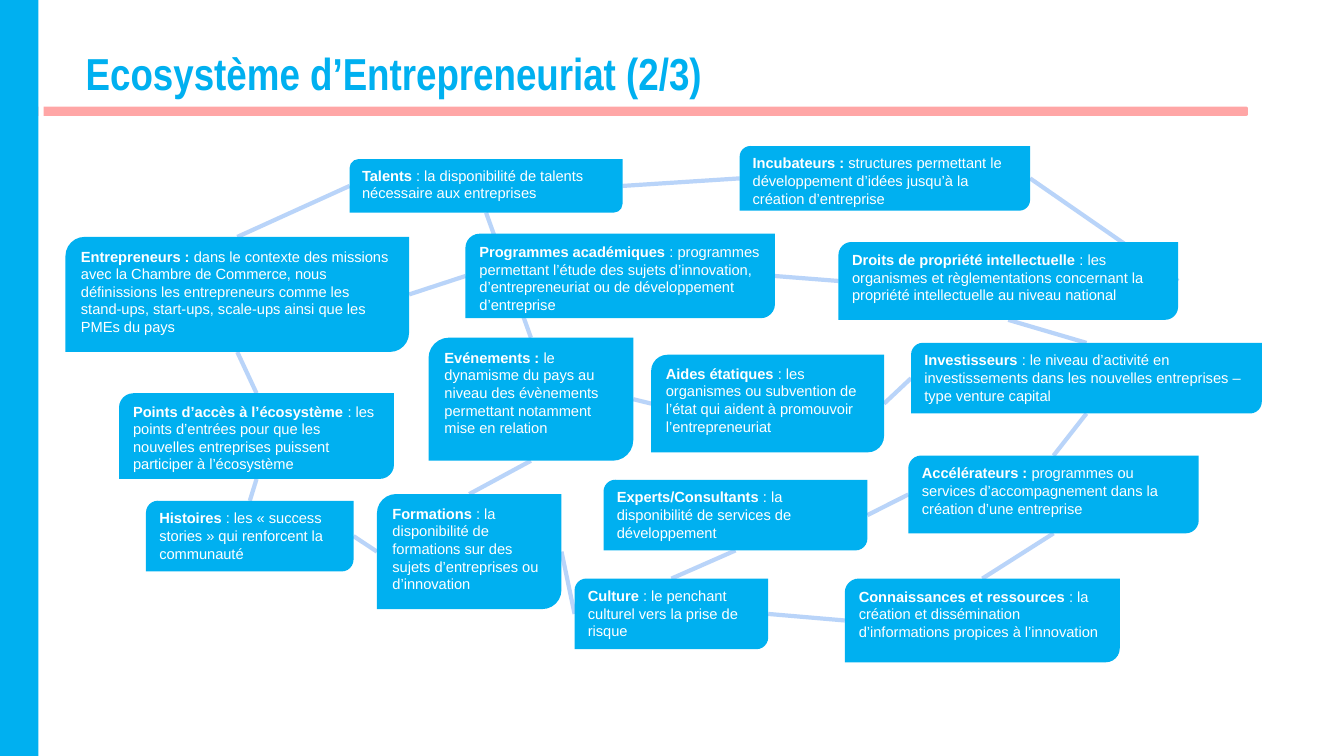
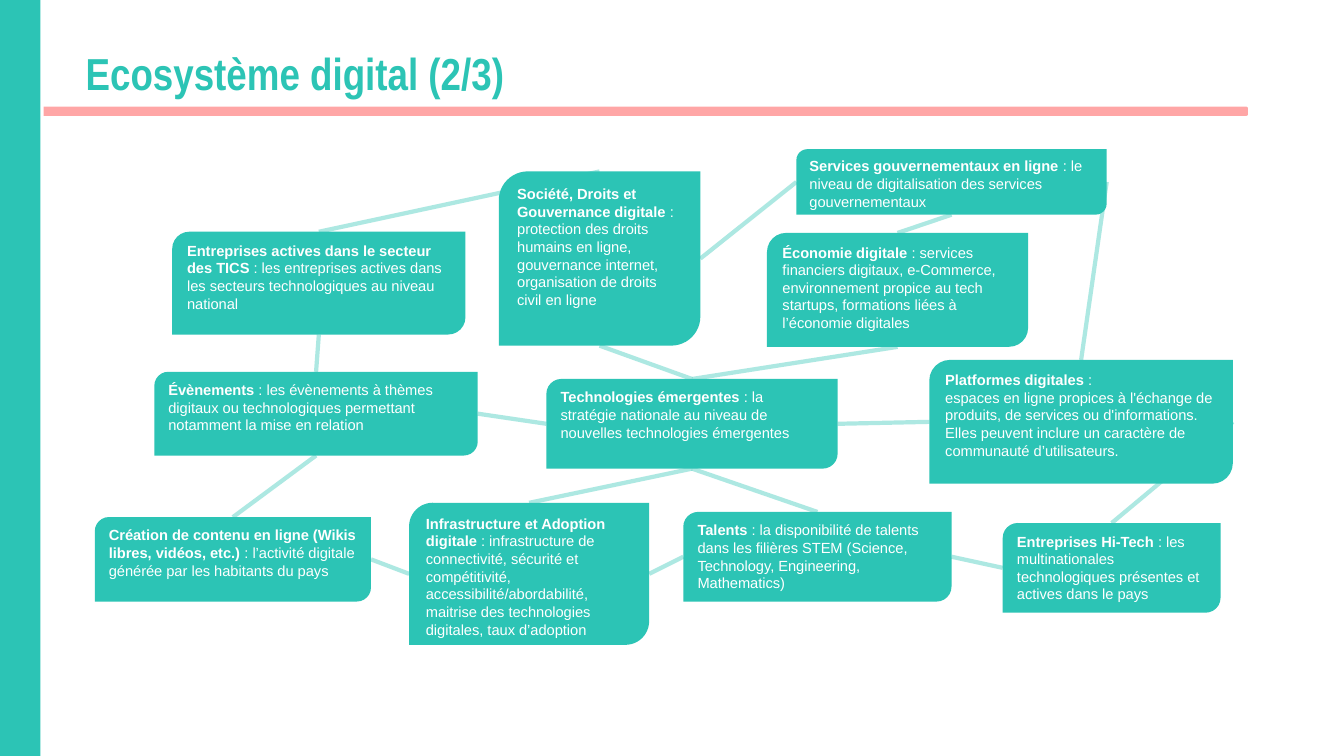
from dataclasses import dataclass
from enum import IntEnum
from typing import NamedTuple

from lxml import etree
from pptx import Presentation
from pptx.dml.color import RGBColor
from pptx.enum import shapes, text
from pptx.oxml.ns import qn
from pptx.util import Cm, Pt


class Side(IntEnum):
    TOP = 0
    LEFT = 1
    BOTTOM = 2
    RIGHT = 3


TOP, LEFT, BOTTOM, RIGHT = Side


@dataclass(frozen=True)
class Theme:
    white: str = "FFFFFF"
    rule: str = "FF0000"
    blue: str = "00B0F0"
    blue_link: str = "4D91F0"
    teal: str = "2CC4B5"
    title_font: str = "Arial Narrow"
    body_font: str = "Arial"
    title_size: float = 32
    body_size: float = 10.5
    link_width: float = 3
    rule_opacity: int = 35
    link_opacity: int = 38


THEME = Theme()
PAGE_WIDTH, PAGE_HEIGHT = 33.87, 19.05


class Frame(NamedTuple):
    """Left, top, width and height in centimetres."""
    left: float
    top: float
    width: float
    height: float

    def lengths(self) -> list[Cm]:
        return [Cm(value) for value in self]


class Card(NamedTuple):
    frame: Frame
    term: str
    detail: str


class Link(NamedTuple):
    start: str
    start_side: Side
    end: str
    end_side: Side


@dataclass(frozen=True)
class Ecosystem:
    title: str
    accent: str
    link_color: str
    band_width: float
    cards: dict[str, Card]
    links: list[Link]


def set_opacity(shape, percent: int) -> None:
    for color in shape.element.spPr.iter(qn("a:srgbClr")):
        etree.SubElement(color, qn("a:alpha"), val=str(percent * 1000))


def add_span(para, words: str, *, size: float, font: str, color: str, bold: bool = False) -> None:
    """Append formatted text; each newline becomes a line break."""
    for index, line in enumerate(words.split("\n")):
        if index:
            para.add_line_break()
        span = para.add_run()
        span.text = line
        span.font.size = Pt(size)
        span.font.name = font
        span.font.bold = bold
        span.font.color.rgb = RGBColor.from_string(color)


def add_block(page, kind, frame: Frame, color: str):
    block = page.shapes.add_shape(kind, *frame.lengths())
    block.shadow.inherit = False
    block.fill.solid()
    block.fill.fore_color.rgb = RGBColor.from_string(color)
    block.line.fill.background()
    return block


def add_page_frame(page, ecosystem: Ecosystem) -> None:
    """Draw the rule, the side band and the title."""
    kinds = shapes.MSO_SHAPE
    rule = add_block(page, kinds.ROUNDED_RECTANGLE, Frame(0, 2.69, 31.45, 0.23), THEME.rule)
    set_opacity(rule, THEME.rule_opacity)
    add_block(page, kinds.RECTANGLE, Frame(0.97, 0, 0.13, PAGE_HEIGHT), THEME.white)
    add_block(page, kinds.RECTANGLE, Frame(0, 0, ecosystem.band_width, PAGE_HEIGHT), ecosystem.accent)

    box = page.shapes.add_textbox(*Frame(1.91, 1.32, 30.66, 1.19).lengths())
    box.text_frame.word_wrap = True
    box.text_frame.vertical_anchor = text.MSO_ANCHOR.MIDDLE
    para = box.text_frame.paragraphs[0]
    para.line_spacing = 0.9
    add_span(para, ecosystem.title, size=THEME.title_size, font=THEME.title_font,
             color=ecosystem.accent, bold=True)


def add_card(page, card: Card, color: str):
    box = add_block(page, shapes.MSO_SHAPE.ROUND_2_DIAG_RECTANGLE, card.frame, color)
    box.text_frame.word_wrap = True
    box.text_frame.vertical_anchor = text.MSO_ANCHOR.TOP
    para = box.text_frame.paragraphs[0]
    para.alignment = text.PP_ALIGN.LEFT
    style = dict(size=THEME.body_size, font=THEME.body_font, color=THEME.white)
    add_span(para, card.term, bold=True, **style)
    add_span(para, f" {card.detail}", **style)
    return box


def add_link(page, link: Link, boxes: dict, color: str):
    line = page.shapes.add_connector(shapes.MSO_CONNECTOR.STRAIGHT, 0, 0, 0, 0)
    line.begin_connect(boxes[link.start], int(link.start_side))
    line.end_connect(boxes[link.end], int(link.end_side))
    line.line.color.rgb = RGBColor.from_string(color)
    line.line.width = Pt(THEME.link_width)
    set_opacity(line, THEME.link_opacity)
    etree.SubElement(line.element.spPr, qn("a:effectLst"))
    return line


def add_ecosystem(deck, ecosystem: Ecosystem) -> None:
    page = deck.slides.add_slide(deck.slide_layouts[6])
    add_page_frame(page, ecosystem)
    boxes = {name: add_card(page, card, ecosystem.accent) for name, card in ecosystem.cards.items()}
    rearmost = next(iter(boxes.values()))
    for link in ecosystem.links:
        line = add_link(page, link, boxes, ecosystem.link_color)
        rearmost.element.addprevious(line.element)  # links run behind the cards


ENTREPRENEURSHIP = Ecosystem(
    title="Ecosystème d’Entrepreneuriat (2/3)",
    accent=THEME.blue,
    link_color=THEME.blue_link,
    band_width=0.97,
    cards={
        "incubators": Card(Frame(18.64, 3.68, 7.32, 1.63), "Incubateurs :",
                           "structures permettant le développement d’idées jusqu’à la création d’entreprise"),
        "accelerators": Card(Frame(22.89, 11.48, 7.32, 1.96), "Accélérateurs :",
                             "programmes ou services d’accompagnement dans la création d’une entreprise"),
        "aid": Card(Frame(16.41, 8.94, 5.87, 2.46), "Aides étatiques",
                    ": les organismes ou subvention de l’état qui aident à promouvoir l’entrepreneuriat"),
        "entrepreneurs": Card(Frame(1.65, 5.97, 8.66, 2.9), "Entrepreneurs :",
                              "dans le contexte des missions avec la Chambre de Commerce, nous définissions les "
                              "entrepreneurs comme les stand-ups, start-ups, scale-ups ainsi que les PMEs du pays"),
        "programmes": Card(Frame(11.73, 5.89, 7.8, 2.13), "Programmes académiques",
                           ": programmes permettant l’étude des sujets d’innovation, d’entrepreneuriat "
                           "ou de développement d’entreprise"),
        "rights": Card(Frame(21.13, 6.1, 8.56, 1.96), "Droits de propriété intellectuelle",
                       ": les organismes et règlementations concernant la propriété intellectuelle "
                       "au niveau national"),
        "investors": Card(Frame(22.96, 8.64, 8.84, 1.78), "Investisseurs",
                          ": le niveau d’activité en investissements dans les nouvelles entreprises – "
                          "type venture capital"),
        "talents": Card(Frame(8.81, 4.01, 6.88, 1.35), "Talents",
                        ": la disponibilité de talents nécessaire aux entreprises"),
        "knowledge": Card(Frame(21.29, 14.58, 6.93, 2.11), "Connaissances et ressources",
                          ": la création et dissémination d’informations propices à l’innovation"),
        "access": Card(Frame(3, 9.91, 6.93, 2.16), "Points d’accès à l’écosystème",
                       ": les points d’entrées pour que les nouvelles entreprises puissent participer "
                       "à l’écosystème"),
        "culture": Card(Frame(14.48, 14.58, 4.88, 1.78), "Culture",
                        ": le penchant culturel vers la prise de risque"),
        "events": Card(Frame(10.8, 8.51, 5.16, 3.1), "Evénements :",
                       "le dynamisme du pays au niveau des évènements permettant notamment mise en relation"),
        "stories": Card(Frame(3.68, 12.62, 5.23, 1.78), "Histoires",
                        ": les « success stories » qui renforcent la communauté"),
        "experts": Card(Frame(15.21, 12.09, 6.65, 1.78), "Experts/Consultants",
                        ": la disponibilité de services de développement"),
        "training": Card(Frame(9.5, 12.45, 4.65, 2.9), "Formations",
                         ": la disponibilité de formations sur des sujets d’entreprises ou d’innovation"),
    },
    links=[
        Link("talents", BOTTOM, "events", TOP),
        Link("entrepreneurs", BOTTOM, "access", TOP),
        Link("entrepreneurs", TOP, "talents", LEFT),
        Link("entrepreneurs", RIGHT, "programmes", LEFT),
        Link("investors", LEFT, "aid", RIGHT),
        Link("experts", RIGHT, "accelerators", LEFT),
        Link("investors", BOTTOM, "accelerators", TOP),
        Link("investors", TOP, "rights", BOTTOM),
        Link("incubators", RIGHT, "rights", RIGHT),
        Link("culture", TOP, "experts", BOTTOM),
        Link("training", RIGHT, "culture", LEFT),
        Link("stories", RIGHT, "training", LEFT),
        Link("accelerators", BOTTOM, "knowledge", TOP),
        Link("culture", RIGHT, "knowledge", LEFT),
        Link("incubators", LEFT, "talents", RIGHT),
        Link("training", TOP, "events", BOTTOM),
        Link("aid", LEFT, "events", RIGHT),
        Link("rights", LEFT, "programmes", RIGHT),
        Link("access", BOTTOM, "stories", TOP),
    ],
)

DIGITAL = Ecosystem(
    title="Ecosystème digital (2/3)",
    accent=THEME.teal,
    link_color=THEME.teal,
    band_width=1.02,
    cards={
        "infrastructure": Card(Frame(10.31, 12.67, 6.05, 3.58), "Infrastructure et Adoption digitale",
                               ": infrastructure de connectivité, sécurité et compétitivité, "
                               "accessibilité/abordabilité, maitrise des technologies digitales, taux d’adoption"),
        "platforms": Card(Frame(23.42, 9.07, 7.65, 3.12), "Platformes digitales",
                          ":\nespaces en ligne propices à l'échange de produits, de services ou d'informations. "
                          "Elles peuvent inclure un caractère de communauté d’utilisateurs."),
        "economy": Card(Frame(19.33, 5.87, 6.58, 2.87), "Économie digitale",
                        ": services financiers digitaux, e-Commerce, environnement propice au tech startups, "
                        "formations liées à l’économie digitales"),
        "society": Card(Frame(12.57, 4.32, 5.08, 4.39), "Société, Droits et Gouvernance digitale",
                        ": protection des droits humains en ligne, gouvernance internet, organisation de "
                        "droits civil en ligne"),
        "companies": Card(Frame(4.34, 5.84, 7.39, 2.59), "Entreprises actives dans le secteur des TICS",
                          ": les entreprises actives dans les secteurs technologiques au niveau national"),
        "events": Card(Frame(3.89, 9.37, 8.15, 2.11), "Évènements",
                       ": les évènements à thèmes digitaux ou technologiques permettant notamment "
                       "la mise en relation"),
        "hi_tech": Card(Frame(25.27, 13.18, 5.49, 2.26), "Entreprises Hi-Tech",
                        ": les multinationales technologiques présentes et actives dans le pays"),
        "services": Card(Frame(20.07, 3.76, 7.82, 1.65), "Services gouvernementaux en ligne",
                         ": le niveau de digitalisation des services gouvernementaux"),
        "content": Card(Frame(2.39, 13.03, 6.96, 2.13),
                        "Création de contenu en ligne (Wikis libres, vidéos, etc.)",
                        ": l’activité digitale générée par les habitants du pays"),
        "talents": Card(Frame(17.22, 12.9, 6.76, 2.26), "Talents",
                        ": la disponibilité de talents dans les filières STEM (Science, Technology, "
                        "Engineering, Mathematics)"),
        "emerging": Card(Frame(13.77, 9.55, 7.34, 2.26), "Technologies émergentes",
                         ": la stratégie nationale au niveau de nouvelles technologies émergentes"),
    },
    links=[
        Link("society", TOP, "companies", TOP),
        Link("events", TOP, "companies", BOTTOM),
        Link("events", BOTTOM, "content", TOP),
        Link("infrastructure", LEFT, "content", RIGHT),
        Link("talents", LEFT, "infrastructure", RIGHT),
        Link("hi_tech", LEFT, "talents", RIGHT),
        Link("hi_tech", TOP, "platforms", RIGHT),
        Link("platforms", TOP, "services", RIGHT),
        Link("services", LEFT, "society", RIGHT),
        Link("services", BOTTOM, "economy", TOP),
        Link("economy", BOTTOM, "emerging", TOP),
        Link("emerging", BOTTOM, "infrastructure", TOP),
        Link("emerging", LEFT, "events", RIGHT),
        Link("platforms", LEFT, "emerging", RIGHT),
        Link("talents", TOP, "emerging", BOTTOM),
        Link("emerging", TOP, "society", BOTTOM),
    ],
)


def main() -> None:
    deck = Presentation()
    deck.slide_width, deck.slide_height = Cm(PAGE_WIDTH), Cm(PAGE_HEIGHT)
    for ecosystem in (ENTREPRENEURSHIP, DIGITAL):
        add_ecosystem(deck, ecosystem)
    deck.save("out.pptx")


if __name__ == "__main__":
    main()
